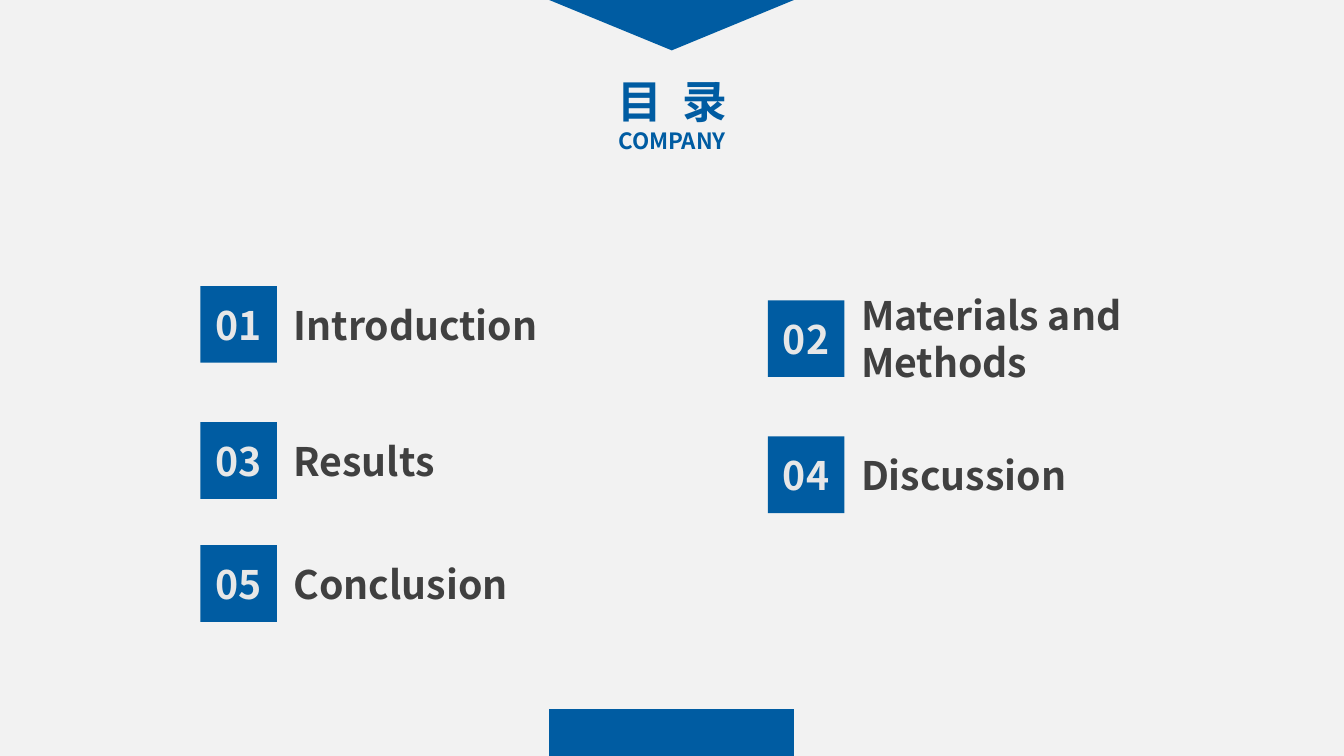
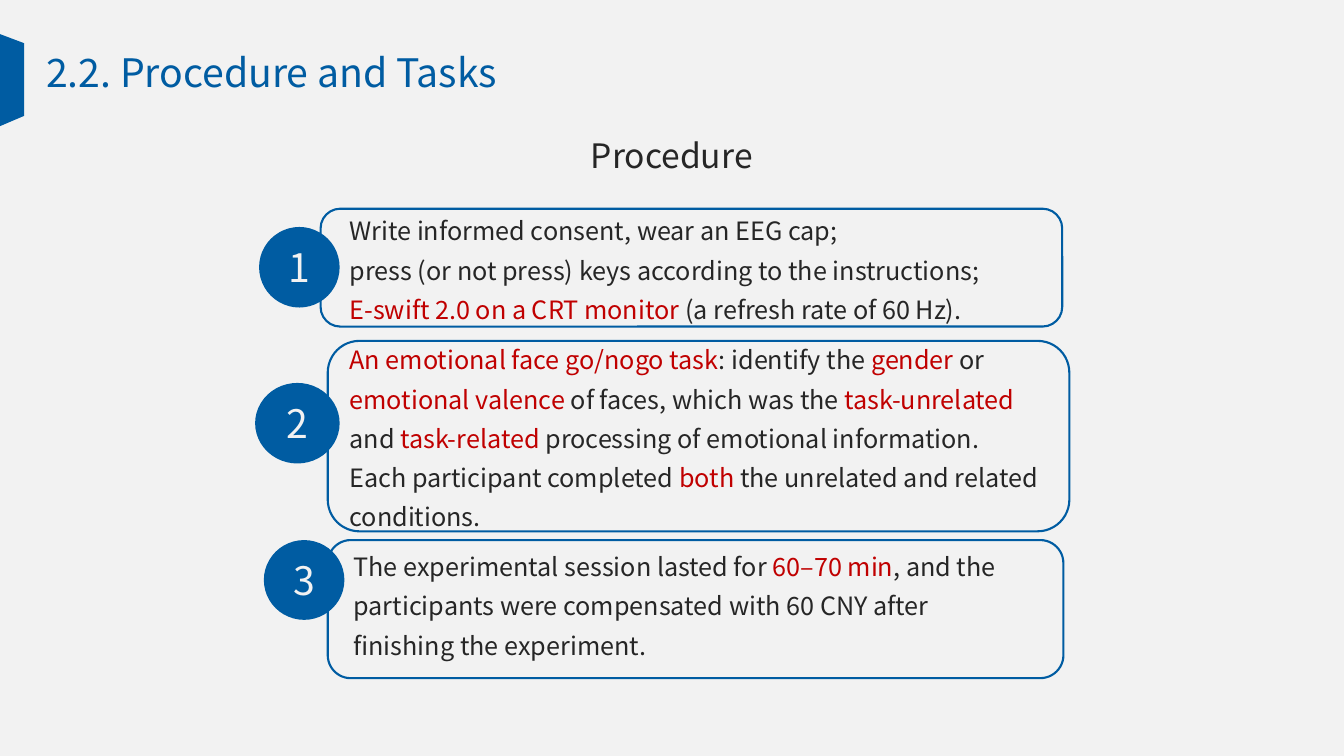
from lxml import etree
from pptx import Presentation
from pptx.dml.color import RGBColor
from pptx.enum.shapes import MSO_SHAPE
from pptx.enum.text import MSO_ANCHOR, MSO_AUTO_SIZE, PP_ALIGN
from pptx.oxml.ns import qn
from pptx.util import Cm, Pt

FONT = "Noto Sans CJK SC"
BLUE = RGBColor(0x00, 0x5C, 0xA2)
RED = RGBColor(0xC0, 0x00, 0x00)
BACKGROUND = RGBColor(0xF2, 0xF2, 0xF2)
NUMBER_GREY = RGBColor(0xE7, 0xE7, 0xE7)
LABEL_GREY = RGBColor(0x40, 0x40, 0x40)
BODY_GREY = RGBColor(0x26, 0x26, 0x26)

RECTANGLE = MSO_SHAPE.RECTANGLE
ROUNDED = MSO_SHAPE.ROUNDED_RECTANGLE
OVAL = MSO_SHAPE.OVAL
LEFT, CENTER = PP_ALIGN.LEFT, PP_ALIGN.CENTER
TOP, MIDDLE = MSO_ANCHOR.TOP, MSO_ANCHOR.MIDDLE
TITLE_ONLY = 5


def write_text(shape, lines, size, color, align=LEFT, anchor=TOP, bold=False, spacing=1.0):
    """Write one paragraph per line; parts between asterisks turn red."""
    frame = shape.text_frame
    frame.word_wrap = True
    frame.auto_size = MSO_AUTO_SIZE.NONE
    frame.vertical_anchor = anchor
    for index, line in enumerate(lines):
        paragraph = frame.add_paragraph() if index else frame.paragraphs[0]
        paragraph.alignment = align
        paragraph.line_spacing = spacing
        for position, part in enumerate(line.split("*")):
            if not part:
                continue
            run = paragraph.add_run()
            run.text = part
            run.font.name = FONT
            run.font.size = Pt(size)
            run.font.bold = bold
            run.font.color.rgb = RED if position % 2 else color
            east_asian = etree.SubElement(run.font._element, qn("a:ea"))
            east_asian.set("typeface", FONT)


def paint(shape, filled=True):
    """Give a shape a blue fill without a line, or a blue line without a fill."""
    shape.shadow.inherit = False
    if filled:
        shape.fill.solid()
        shape.fill.fore_color.rgb = BLUE
        shape.line.fill.background()
    else:
        shape.fill.background()
        shape.line.color.rgb = BLUE
        shape.line.width = Pt(1.5)


presentation = Presentation()
presentation.slide_width = Cm(33.87)
presentation.slide_height = Cm(19.05)
master_fill = presentation.slide_master.background.fill
master_fill.solid()
master_fill.fore_color.rgb = BACKGROUND

layout = presentation.slide_layouts[TITLE_ONLY]
contents = presentation.slides.add_slide(layout)
procedure = presentation.slides.add_slide(layout)

# Titles and blue corner marks
titles = [
    (contents, (15.16, 1.73, 3.56, 2.31), ["目 录", "COMPANY"], 32, CENTER, True),
    (procedure, (0.91, 1.09, 12.57, 1.45), ["2.2. Procedure and Tasks"], 28, LEFT, False),
]
for slide, box, lines, size, align, bold in titles:
    title = slide.shapes.title
    title.left, title.top, title.width, title.height = map(Cm, box)
    write_text(title, lines, size, BLUE, align, bold=bold)

heading, subheading = contents.shapes.title.text_frame.paragraphs
heading.runs[0].font._element.set("spc", "360")
subheading.runs[0].font.size = Pt(16)

marks = [
    (contents, [(13.84, 0), (20.01, 0), (16.93, 1.27)]),
    (contents, [(13.84, 17.86), (20.01, 17.86), (20.01, 19.05), (13.84, 19.05)]),
    (procedure, [(0, 0.86), (0.61, 1.09), (0.61, 2.92), (0, 3.18)]),
]
for slide, corners in marks:
    points = [(Cm(x), Cm(y)) for x, y in corners]
    builder = slide.shapes.build_freeform(*points[0])
    builder.add_line_segments(points[1:], close=True)
    paint(builder.convert_to_shape())

# Contents: two columns, the right one slightly lower
SQUARE = 1.93
COLUMN_LEFTS = [5.05, 19.35]
ROW_TOPS = [7.21, 10.64, 13.74]
RIGHT_COLUMN_DROP = 0.36
sections = ["Introduction", "Materials and Methods", "Results", "Discussion", "Conclusion"]
for index, section in enumerate(sections):
    row, column = divmod(index, 2)
    left = COLUMN_LEFTS[column]
    top = ROW_TOPS[row] + column * RIGHT_COLUMN_DROP
    square = contents.shapes.add_shape(RECTANGLE, Cm(left), Cm(top), Cm(SQUARE), Cm(SQUARE))
    paint(square)
    write_text(square, [f"{index + 1:02}"], 28, NUMBER_GREY, CENTER, MIDDLE, bold=True)
    label = contents.shapes.add_textbox(Cm(left + 2.1), Cm(top), Cm(10.36), Cm(SQUARE))
    write_text(label, [section], 28, LABEL_GREY, anchor=MIDDLE, bold=True)

# Procedure: numbered panels
caption = procedure.shapes.add_textbox(Cm(13.13), Cm(3.28), Cm(7.6), Cm(1.27))
write_text(caption, ["Procedure"], 24, BODY_GREY, CENTER)

# Each step: panel box, badge box, text box, lines
steps = [
    ((8.08, 5.26, 18.69, 2.97), (6.53, 5.72, 2.03, 2.03), (8.56, 5.08, 18.29, 3.25), [
        "Write informed consent, wear an EEG cap;",
        "press (or not press) keys according to the instructions;",
        "*E-swift 2.0 on a CRT monitor* (a refresh rate of 60 Hz).",
    ]),
    ((8.26, 8.59, 18.69, 4.8), (6.43, 9.65, 2.13, 2.03), (8.56, 8.33, 18.29, 4.19), [
        "*An emotional face go/nogo task*: identify the *gender* or *emotional valence* "
        "of faces, which was the *task-unrelated* and *task-related* processing of "
        "emotional information.",
        "Each participant completed *both* the unrelated and related conditions.",
    ]),
    ((8.26, 13.61, 18.54, 3.48), (6.65, 13.61, 2.03, 2.01), (8.66, 13.54, 17.42, 3.99), [
        "The experimental session lasted for* 60–70 min*, and the participants were "
        "compensated with 60 CNY after finishing the experiment.",
    ]),
]
for number, (panel_box, badge_box, text_box, lines) in enumerate(steps, 1):
    panel = procedure.shapes.add_shape(ROUNDED, *map(Cm, panel_box))
    paint(panel, filled=False)
    badge = procedure.shapes.add_shape(OVAL, *map(Cm, badge_box))
    paint(badge)
    write_text(badge, [str(number)], 28, BACKGROUND, CENTER, MIDDLE)
    description = procedure.shapes.add_textbox(*map(Cm, text_box))
    write_text(description, lines, 18, BODY_GREY, spacing=1.3)

presentation.save("out.pptx")
